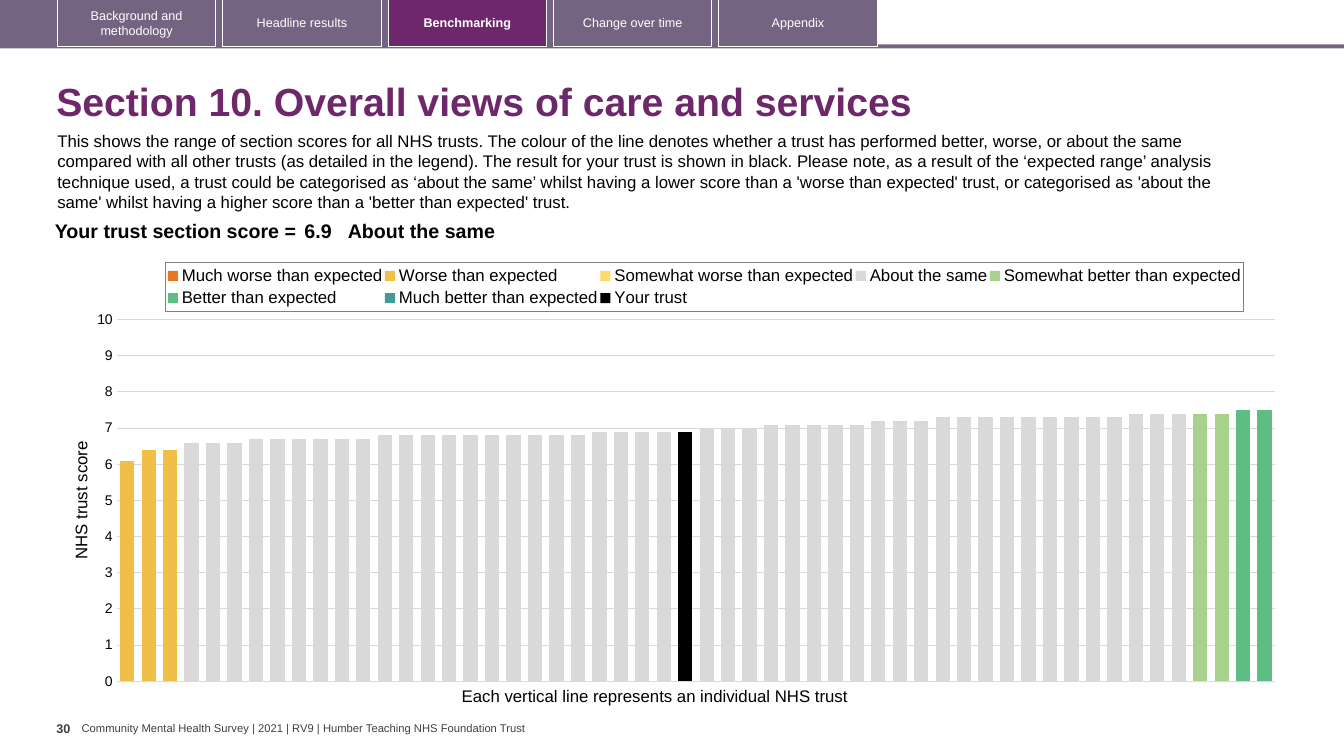
from copy import deepcopy
from dataclasses import dataclass

from pptx import Presentation
from pptx.chart.data import CategoryChartData
from pptx.dml.color import RGBColor
from pptx.enum.chart import XL_CHART_TYPE, XL_LEGEND_POSITION, XL_TICK_MARK
from pptx.enum.shapes import MSO_SHAPE
from pptx.enum.text import MSO_ANCHOR, PP_ALIGN
from pptx.oxml import parse_xml
from pptx.oxml.ns import nsdecls, qn
from pptx.util import Inches, Pt

PURPLE, MAUVE, GREY = "6D276A", "756382", "404040"
COUNT = 54  # trusts on the chart


@dataclass
class Label:
    text: str
    box: tuple[float, float, float, float]
    size: float
    color: str = "000000"
    bold: bool = False
    wrap: bool = True
    inset: tuple[float, float] = (0.1, 0.05)
    middle: bool = False
    lines: float | None = None


@dataclass
class Band:
    name: str
    color: str
    start: int = 0
    runs: tuple[tuple[float, int], ...] = ()  # (score, number of trusts)

    def scores(self) -> list[float | None]:
        found = [score for score, times in self.runs for _ in range(times)]
        return [None] * self.start + found + [None] * (COUNT - self.start - len(found))


TABS = ["Background and methodology", "Headline results", "Benchmarking",
        "Change over time", "Appendix"]

INTRO = (
    "This shows the range of section scores for all NHS trusts. The colour of the line "
    "denotes whether a trust has performed better, worse, or about the same compared with "
    "all other trusts (as detailed in the legend). The result for your trust is shown in "
    "black. Please note, as a result of the ‘expected range’ analysis technique used, a "
    "trust could be categorised as ‘about the same’ whilst having a lower score than a "
    "'worse than expected' trust, or categorised as 'about the same' whilst having a higher "
    "score than a 'better than expected' trust."
)

LABELS = [
    Label("Community Mental Health Survey | 2021 | RV9 | Humber Teaching NHS Foundation Trust",
          (0.81, 7.16, 4.48, 0.13), 8, GREY, wrap=False, inset=(0, 0), middle=True),
    Label("Section 10. Overall views of care and services",
          (0.46, 0.67, 12.49, 0.72), 28, PURPLE, bold=True, middle=True, lines=0.9),
    Label("30", (0.56, 7.1, 0.25, 0.4), 9, GREY, bold=True, wrap=False, inset=(0, 0.05)),
    Label(INTRO, (0.47, 1.25, 12.13, 0.91), 12),
    Label("Each vertical line represents an individual NHS trust",
          (4.48, 6.75, 4.11, 0.3), 12, wrap=False),
]

BANDS = [
    Band("Much worse than expected", "E87722"),
    Band("Worse than expected", "F1BE48", 0, ((6.1, 1), (6.4, 2))),
    Band("Somewhat worse than expected", "FFD966"),
    Band("About the same", "D9D9D9", 3,
         ((6.6, 3), (6.7, 6), (6.8, 10), (6.9, 5), (7, 3), (7.1, 5), (7.2, 3),
          (7.3, 9), (7.4, 3))),
    Band("Somewhat better than expected", "A9D18E", 50, ((7.4, 2),)),
    Band("Better than expected", "5FBD83", 52, ((7.5, 2),)),
    Band("Much better than expected", "419999"),
    Band("Your trust", "000000", 26, ((6.9, 1),)),
]


def rgb(code: str) -> RGBColor:
    return RGBColor.from_string(code)


def style(font, size: float, color: str = "000000", bold: bool = False) -> None:
    font.name, font.size, font.bold = "Arial", Pt(size), bold
    font.color.rgb = rgb(color)


def add_label(slide, label: Label) -> None:
    frame = slide.shapes.add_textbox(*map(Inches, label.box)).text_frame
    frame.text = label.text
    frame.word_wrap = label.wrap
    frame.margin_left = frame.margin_right = Inches(label.inset[0])
    frame.margin_top = frame.margin_bottom = Inches(label.inset[1])
    frame.vertical_anchor = MSO_ANCHOR.MIDDLE if label.middle else MSO_ANCHOR.TOP
    para = frame.paragraphs[0]
    if label.lines:
        para.line_spacing = label.lines
    style(para.runs[0].font, label.size, label.color, label.bold)


def add_bar(slide, box: tuple[float, float, float, float], fill: str | None):
    bar = slide.shapes.add_shape(MSO_SHAPE.RECTANGLE, *map(Inches, box))
    bar.shadow.inherit = False
    if fill:
        bar.fill.solid()
        bar.fill.fore_color.rgb = rgb(fill)
    else:
        bar.fill.background()
    bar.line.fill.background()
    return bar


def add_tab(slide, index: int, text: str) -> None:
    live = text == "Benchmarking"
    tab = add_bar(slide, (0.57 + 1.64 * index, -0.01, 1.57, 0.47), PURPLE if live else None)
    tab.line.color.rgb = rgb("FFFFFF")
    tab.line.width = Pt(0.75)
    frame = tab.text_frame
    frame.text = text
    frame.word_wrap = True
    frame.vertical_anchor = MSO_ANCHOR.MIDDLE
    frame.paragraphs[0].alignment = PP_ALIGN.CENTER
    style(frame.paragraphs[0].runs[0].font, 9, "FFFFFF", live)


def layout(x: float, y: float, w: float, h: float, inner: bool = False):
    target = '<c:layoutTarget val="inner"/>' if inner else ""
    sizes = "".join(f'<c:{tag} val="{val}"/>' for tag, val in zip("xywh", (x, y, w, h)))
    return parse_xml(f'<c:layout {nsdecls("c")}><c:manualLayout>{target}'
                     f'<c:xMode val="edge"/><c:yMode val="edge"/>{sizes}'
                     '</c:manualLayout></c:layout>')


def split_last(plot) -> None:
    """Move the last series to a second pair of axes."""
    bars, cat, val = (plot.find(qn(f"c:{tag}")) for tag in ("barChart", "catAx", "valAx"))
    extra, cat2, val2 = deepcopy(bars), deepcopy(cat), deepcopy(val)
    bars.remove(bars.findall(qn("c:ser"))[-1])
    for ser in extra.findall(qn("c:ser"))[:-1]:
        extra.remove(ser)
    for node, ids in zip(extra.findall(qn("c:axId")), ("5001", "5002")):
        node.set("val", ids)
    for axis, own, other in ((cat2, "5001", "5002"), (val2, "5002", "5001")):
        axis.find(qn("c:axId")).set("val", own)
        axis.find(qn("c:crossAx")).set("val", other)
    for tag in ("majorGridlines", "title"):
        val2.remove(val2.find(qn(f"c:{tag}")))
    for tag, value in (("axPos", "r"), ("majorTickMark", "out"),
                       ("tickLblPos", "none"), ("crosses", "max")):
        val2.find(qn(f"c:{tag}")).set("val", value)
    bars.addnext(extra)
    val.addnext(val2)
    val2.addnext(cat2)


def add_scores(slide) -> None:
    data = CategoryChartData()
    data.categories = [str(n + 1) for n in range(COUNT)]
    for band in BANDS:
        data.add_series(band.name, band.scores())
    box = map(Inches, (0.67, 2.47, 12.15, 4.44))
    chart = slide.shapes.add_chart(XL_CHART_TYPE.COLUMN_CLUSTERED, *box, data).chart
    chart.has_title = False
    chart.font.name, chart.font.size = "Calibri", Pt(10)
    bars = chart.plots[0]
    bars.gap_width, bars.overlap, bars.vary_by_categories = 50, 100, False
    for series, band in zip(bars.series, BANDS):
        series.format.fill.solid()
        series.format.fill.fore_color.rgb = rgb(band.color)

    # Axes
    chart.category_axis.visible = False
    axis = chart.value_axis
    axis.minimum_scale, axis.maximum_scale, axis.major_unit = 0, 10, 1
    axis.major_tick_mark = axis.minor_tick_mark = XL_TICK_MARK.NONE
    axis.format.line.fill.background()
    axis.tick_labels.number_format = "0"
    axis.tick_labels.number_format_is_linked = False
    style(axis.tick_labels.font, 10)
    grid = axis.major_gridlines.format.line
    grid.color.rgb, grid.width = rgb("D9D9D9"), Pt(0.75)
    title = axis.axis_title.text_frame
    title.text = "NHS trust score"
    style(title.paragraphs[0].runs[0].font, 12)

    # Legend
    chart.has_legend = True
    chart.legend.position = XL_LEGEND_POSITION.TOP
    chart.legend.include_in_layout = False
    style(chart.legend.font, 12)
    legend = chart.element.find(f".//{qn('c:legend')}")
    for old in legend.findall(qn("c:layout")):
        legend.remove(old)
    legend.find(qn("c:legendPos")).addnext(layout(0.08, 0.03, 0.88, 0.11))
    legend.find(qn("c:overlay")).addnext(parse_xml(
        f'<c:spPr {nsdecls("c", "a")}><a:ln w="9525"><a:solidFill>'
        '<a:srgbClr val="7F7F7F"/></a:solidFill></a:ln></c:spPr>'))

    # Plot area
    plot = chart.element.find(f".//{qn('c:plotArea')}")
    for old in plot.findall(qn("c:layout")):
        plot.remove(old)
    plot.insert(0, layout(0.04, 0.158, 0.946, 0.808, inner=True))
    split_last(plot)


def add_result(slide) -> None:
    box = map(Inches, (0.35, 2.15, 11.69, 0.31))
    table = slide.shapes.add_table(1, 3, *box).table
    table.first_row = table.horz_banding = False
    cells = (("Your trust section score =", 2.63, 0.04), ("6.9", 0.47, 0.04),
             ("About the same", 8.59, 0))
    for index, (text, width, side) in enumerate(cells):
        table.columns[index].width = Inches(width)
        cell = table.cell(0, index)
        cell.fill.background()
        cell.margin_left = cell.margin_right = Inches(side)
        cell.margin_top = cell.margin_bottom = Inches(0.04)
        cell.text_frame.text = text
        para = cell.text_frame.paragraphs[0]
        para.alignment = PP_ALIGN.LEFT if index else PP_ALIGN.RIGHT
        style(para.runs[0].font, 14, bold=True)


def main() -> None:
    deck = Presentation()
    deck.slide_width, deck.slide_height = Inches(13.33), Inches(7.5)
    slide = deck.slides.add_slide(deck.slide_layouts[6])
    # Navigation
    add_bar(slide, (-0.03, 0.44, 13.36, 0.04), MAUVE)
    add_bar(slide, (-0.03, 0, 8.73, 0.47), MAUVE)
    for index, text in enumerate(TABS):
        add_tab(slide, index, text)
    # Content
    for label in LABELS:
        add_label(slide, label)
    add_scores(slide)
    add_result(slide)
    deck.save("out.pptx")


if __name__ == "__main__":
    main()
